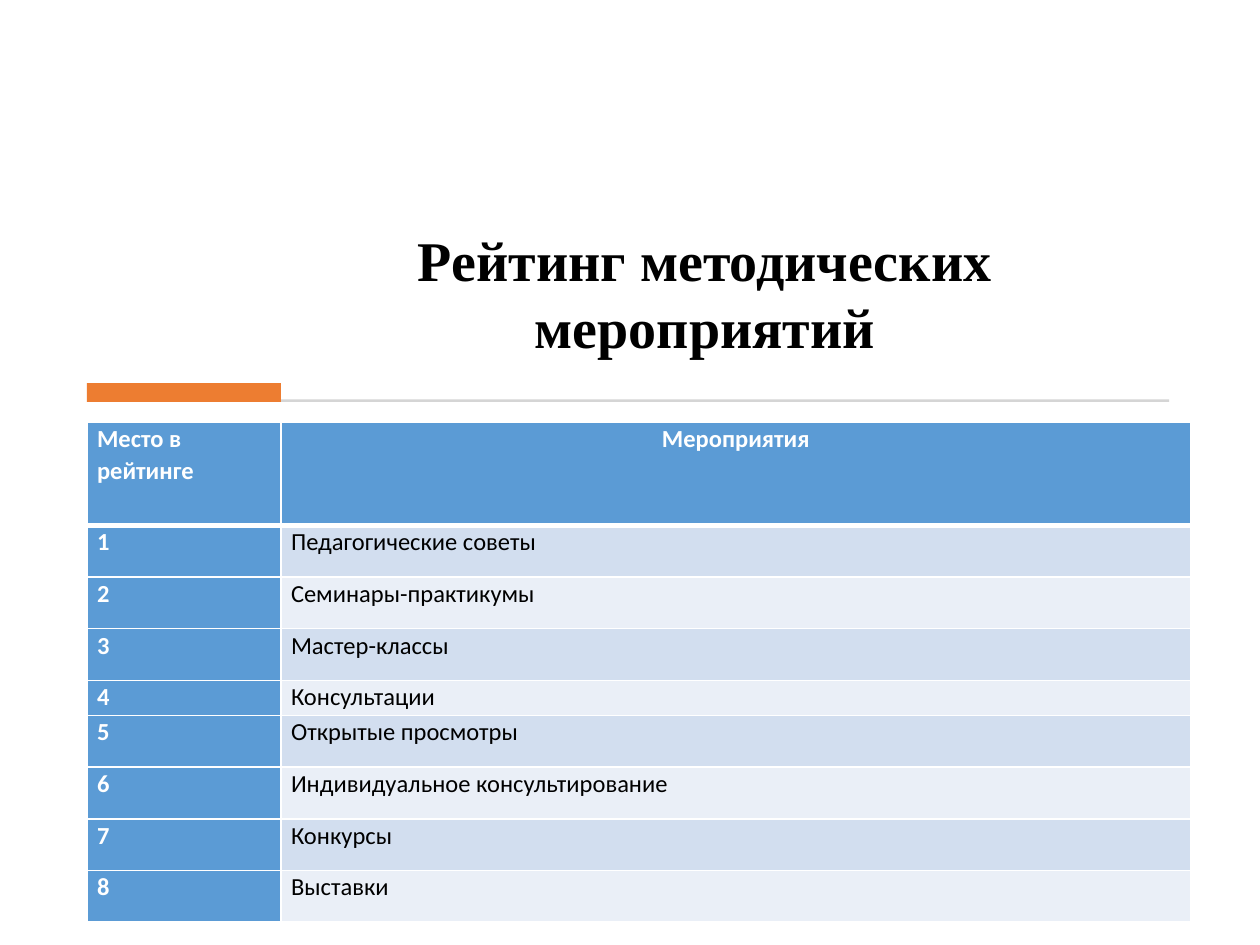
from lxml.etree import SubElement
from pptx import Presentation
from pptx.dml.color import RGBColor
from pptx.enum.shapes import MSO_SHAPE
from pptx.enum.text import MSO_ANCHOR, PP_ALIGN
from pptx.oxml.ns import qn
from pptx.util import Inches, Pt

WHITE = RGBColor(0xFF, 0xFF, 0xFF)
BLACK = RGBColor(0, 0, 0)
BLUE = RGBColor(0x5B, 0x9B, 0xD5)
BANDS = RGBColor(0xD2, 0xDE, 0xEF), RGBColor(0xEA, 0xEF, 0xF7)
GREY = RGBColor(0xD5, 0xD5, 0xD5)
ORANGE = RGBColor(0xED, 0x7D, 0x31)

HEADS = "Место в рейтинге", "Мероприятия"
EVENTS = (
    "Педагогические советы",
    "Семинары-практикумы",
    "Мастер-классы",
    "Консультации",
    "Открытые просмотры",
    "Индивидуальное консультирование",
    "Конкурсы",
    "Выставки",
)
HEAD_HEIGHT, ROW_HEIGHT, SHORT_HEIGHT = 0.82, 0.41, 0.28
SHORT_ROW = 4


def add_run(para, text, font, size, color, bold):
    run = para.add_run()
    run.text = text
    run.font.name = font
    run.font.size = Pt(size)
    run.font.color.rgb = color
    run.font.bold = bold


def add_title(slide, text):
    title = slide.shapes.title
    title.left, title.top = Inches(2.64), Inches(1.73)
    title.width, title.height = Inches(5.91), Inches(1.18)
    frame = title.text_frame
    frame.word_wrap = True
    frame.vertical_anchor = MSO_ANCHOR.MIDDLE
    para = frame.paragraphs[0]
    para.alignment = PP_ALIGN.CENTER
    add_run(para, text, "Times New Roman", 32, BLACK, True)


def add_bar(slide, left, top, width, height, color):
    bar = slide.shapes.add_shape(
        MSO_SHAPE.RECTANGLE, Inches(left), Inches(top), Inches(width), Inches(height)
    )
    bar.shadow.inherit = False
    bar.fill.solid()
    bar.fill.fore_color.rgb = color
    bar.line.fill.background()


def set_borders(cell, top, bottom):
    """Draw white borders; must come before the cell's fill."""
    props = cell._tc.get_or_add_tcPr()
    for side, width in (("L", 1), ("R", 1), ("T", top), ("B", bottom)):
        line = SubElement(props, qn(f"a:ln{side}"), w=str(Pt(width)))
        fill = SubElement(line, qn("a:solidFill"))
        SubElement(fill, qn("a:srgbClr"), val=str(WHITE))


def fill_cell(cell, text, row, col):
    strong = row == 0 or col == 0
    set_borders(cell, 3 if row == 1 else 1, 3 if row == 0 else 1)
    cell.fill.solid()
    cell.fill.fore_color.rgb = BLUE if strong else BANDS[(row - 1) % 2]
    cell.margin_left = cell.margin_right = Inches(0.08)
    cell.margin_top = cell.margin_bottom = 0
    para = cell.text_frame.paragraphs[0]
    para.line_spacing = 1.07
    para.space_after = Pt(7.5)
    if row == 0 and col == 1:
        para.alignment = PP_ALIGN.CENTER
    add_run(para, text, "Calibri", 14, WHITE if strong else BLACK, strong)


def add_ranking(slide):
    rows = [HEADS] + [(str(place), event) for place, event in enumerate(EVENTS, 1)]
    heights = [HEAD_HEIGHT] + [ROW_HEIGHT] * len(EVENTS)
    heights[SHORT_ROW] = SHORT_HEIGHT
    table = slide.shapes.add_table(
        len(rows), 2, Inches(0.69), Inches(3.35), Inches(8.76), Inches(sum(heights))
    ).table
    for col, width in enumerate((1.54, 7.22)):
        table.columns[col].width = Inches(width)
    for row, texts in enumerate(rows):
        table.rows[row].height = Inches(heights[row])
        for col, text in enumerate(texts):
            fill_cell(table.cell(row, col), text, row, col)


def main():
    deck = Presentation()
    deck.slide_width, deck.slide_height = Inches(10), Inches(7.5)
    slide = deck.slides.add_slide(deck.slide_layouts[5])
    add_bar(slide, 0.71, 3.17, 8.57, 0.02, GREY)
    add_bar(slide, 0.69, 3.04, 1.54, 0.15, ORANGE)
    add_ranking(slide)
    add_title(slide, "Рейтинг методических мероприятий")
    deck.save("out.pptx")


if __name__ == "__main__":
    main()
